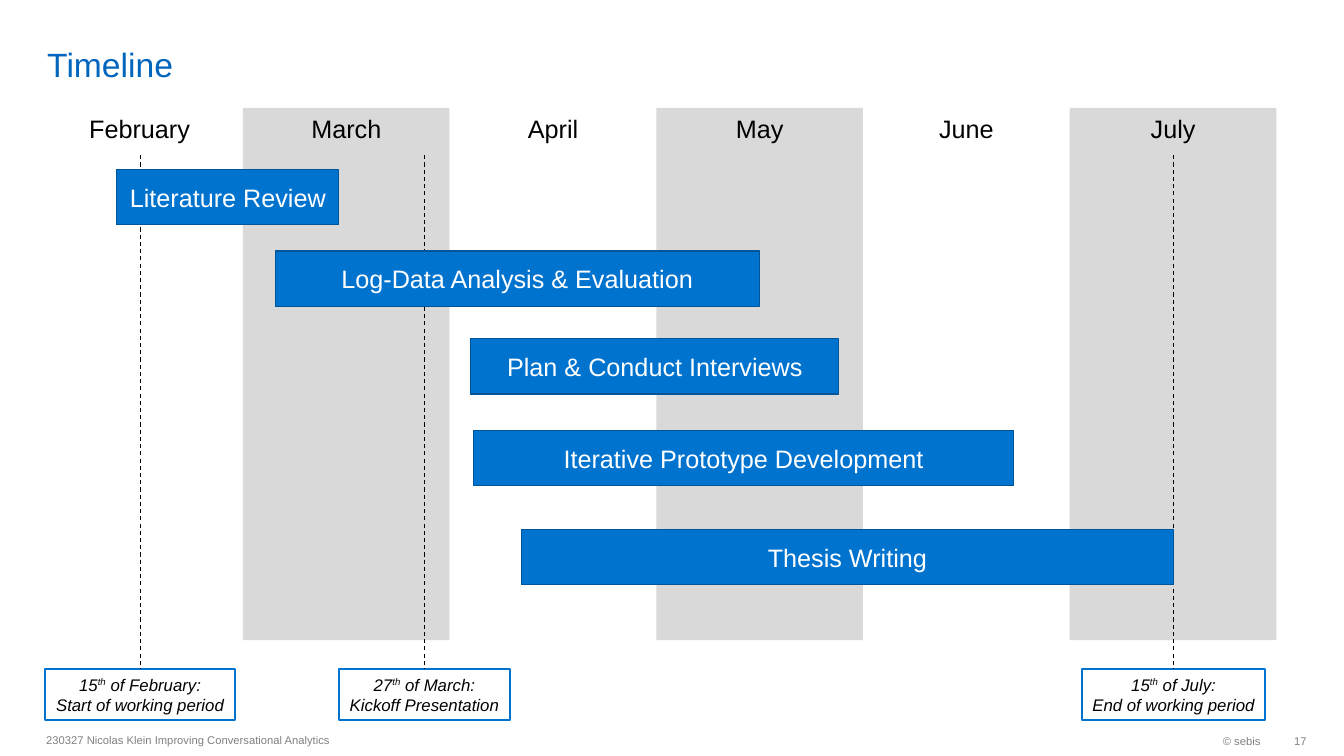
from dataclasses import dataclass

import pptx
import pptx.dml.color
import pptx.enum.dml
import pptx.enum.shapes
import pptx.enum.text
import pptx.oxml
import pptx.oxml.ns
import pptx.util

RGBColor = pptx.dml.color.RGBColor
Align = pptx.enum.text.PP_ALIGN
Anchor = pptx.enum.text.MSO_ANCHOR

TITLE_BLUE = RGBColor(0x00, 0x65, 0xBD)
BAR_BLUE = RGBColor(0x00, 0x73, 0xCF)
BAR_EDGE = RGBColor(0x00, 0x55, 0x99)
COLUMN_GREY = RGBColor(0xD9, 0xD9, 0xD9)
FOOTER_GREY = RGBColor(0x80, 0x80, 0x80)
BLACK = RGBColor(0, 0, 0)
WHITE = RGBColor(0xFF, 0xFF, 0xFF)

FONT = "Arial"
EMU_PER_PX = 9144  # 100 px to the inch

COLUMN_LEFT, COLUMN_TOP, COLUMN_WIDTH, COLUMN_HEIGHT = 36, 107, 205, 528
BAR_HEIGHT = 55
MILESTONE_TOP, LABEL_TOP, LABEL_HEIGHT = 154, 664, 50


@dataclass(frozen=True)
class Caption:
    text: str
    left: int
    top: int
    width: int
    height: int
    size: int
    color: RGBColor
    align: Align = Align.LEFT
    anchor: Anchor = Anchor.MIDDLE
    inset_y: int = 5
    inset_right: int = 10


@dataclass(frozen=True)
class Task:
    name: str
    left: int
    top: int
    width: int


@dataclass(frozen=True)
class Milestone:
    day: str
    month: str
    event: str
    center: int
    label_width: int


CAPTIONS = [
    Caption("Timeline", 37, 5, 1158, 79, 24, TITLE_BLUE,
            anchor=Anchor.BOTTOM, inset_y=0),
    Caption("230327 Nicolas Klein Improving Conversational Analytics",
            36, 718, 630, 32, 8, FOOTER_GREY),
    Caption("© sebis", 1026, 719, 234, 32, 8, FOOTER_GREY, Align.RIGHT),
    Caption("17", 1260, 719, 36, 32, 8, FOOTER_GREY, Align.RIGHT, inset_right=0),
]
MONTHS = ["February", "March", "April", "May", "June", "July"]
TASKS = [
    Task("Literature Review", 116, 168, 220),
    Task("Log-Data Analysis & Evaluation", 273, 249, 480),
    Task("Plan & Conduct Interviews", 467, 336, 365),
    Task("Iterative Prototype Development", 470, 427, 535),
    Task("Thesis Writing", 517, 525, 647),
]
MILESTONES = [
    Milestone("15", "February", "Start of working period", 139, 188),
    Milestone("27", "March", "Kickoff Presentation", 421, 170),
    Milestone("15", "July", "End of working period", 1164, 182),
]


def px(length: int) -> pptx.util.Emu:
    return pptx.util.Emu(length * EMU_PER_PX)


def add_run(paragraph, text: str, size: int, color: RGBColor,
            italic: bool = False, superscript: bool = False) -> None:
    run = paragraph.add_run()
    run.text = text
    run.font.name = FONT
    run.font.size = pptx.util.Pt(size)
    run.font.color.rgb = color
    if italic:
        run.font.italic = True
    if superscript:
        run._r.get_or_add_rPr().set("baseline", "30000")


def add_caption(slide, caption: Caption) -> None:
    box = slide.shapes.add_textbox(px(caption.left), px(caption.top),
                                   px(caption.width), px(caption.height))
    frame = box.text_frame
    frame.word_wrap = True
    frame.vertical_anchor = caption.anchor
    frame.margin_top = frame.margin_bottom = px(caption.inset_y)
    frame.margin_right = px(caption.inset_right)
    paragraph = frame.paragraphs[0]
    paragraph.alignment = caption.align
    add_run(paragraph, caption.text, caption.size, caption.color)


def add_rectangle(slide, left: int, top: int, width: int, height: int,
                  fill: RGBColor | None, edge: RGBColor | None = None,
                  edge_width: float = 0):
    shape = slide.shapes.add_shape(pptx.enum.shapes.MSO_SHAPE.RECTANGLE,
                                   px(left), px(top), px(width), px(height))
    shape.shadow.inherit = False
    if fill is None:
        shape.fill.background()
    else:
        shape.fill.solid()
        shape.fill.fore_color.rgb = fill
    if edge is None:
        shape.line.fill.background()
    else:
        shape.line.color.rgb = edge
        shape.line.width = pptx.util.Pt(edge_width)
    return shape


def write_centered(shape, text: str, color: RGBColor, anchor: Anchor) -> None:
    frame = shape.text_frame
    frame.word_wrap = True
    frame.vertical_anchor = anchor
    paragraph = frame.paragraphs[0]
    paragraph.alignment = Align.CENTER
    add_run(paragraph, text, 18, color)


def add_month(slide, index: int, name: str) -> None:
    column = add_rectangle(slide, COLUMN_LEFT + index * COLUMN_WIDTH, COLUMN_TOP,
                           COLUMN_WIDTH, COLUMN_HEIGHT,
                           COLUMN_GREY if index % 2 else WHITE)
    write_centered(column, name, BLACK, Anchor.TOP)


def add_task(slide, task: Task) -> None:
    bar = add_rectangle(slide, task.left, task.top, task.width, BAR_HEIGHT,
                        BAR_BLUE, BAR_EDGE, 0.85)
    write_centered(bar, task.name, WHITE, Anchor.MIDDLE)


def add_milestone(slide, milestone: Milestone) -> None:
    label = add_rectangle(slide, milestone.center - milestone.label_width // 2,
                          LABEL_TOP, milestone.label_width, LABEL_HEIGHT,
                          None, BAR_BLUE, 1.5)
    frame = label.text_frame
    frame.word_wrap = False
    frame.auto_size = pptx.enum.text.MSO_AUTO_SIZE.SHAPE_TO_FIT_TEXT
    frame.vertical_anchor = Anchor.TOP
    date, event = frame.paragraphs[0], frame.add_paragraph()
    date.alignment = event.alignment = Align.CENTER
    add_run(date, milestone.day, 12, BLACK, italic=True)
    add_run(date, "th", 12, BLACK, italic=True, superscript=True)
    add_run(date, f" of {milestone.month}:", 12, BLACK, italic=True)
    add_run(event, milestone.event, 12, BLACK, italic=True)

    marker = slide.shapes.add_connector(
        pptx.enum.shapes.MSO_CONNECTOR.STRAIGHT,
        px(milestone.center), px(MILESTONE_TOP), px(milestone.center), px(LABEL_TOP))
    marker.end_connect(label, 0)
    marker.line.color.rgb = BLACK
    marker.line.width = pptx.util.Pt(0.75)
    marker.line.dash_style = pptx.enum.dml.MSO_LINE.DASH
    marker._element.spPr.append(
        pptx.oxml.parse_xml(f"<a:effectLst {pptx.oxml.ns.nsdecls('a')}/>"))


def main() -> None:
    presentation = pptx.Presentation()
    presentation.slide_width = px(1333)
    presentation.slide_height = px(750)
    slide = presentation.slides.add_slide(presentation.slide_layouts[6])

    # Title and footer
    for caption in CAPTIONS:
        add_caption(slide, caption)
    # Month columns
    for index, name in enumerate(MONTHS):
        add_month(slide, index, name)
    # Milestone markers run behind the task bars
    for milestone in MILESTONES:
        add_milestone(slide, milestone)
    # Task bars
    for task in TASKS:
        add_task(slide, task)

    presentation.save("out.pptx")


if __name__ == "__main__":
    main()
